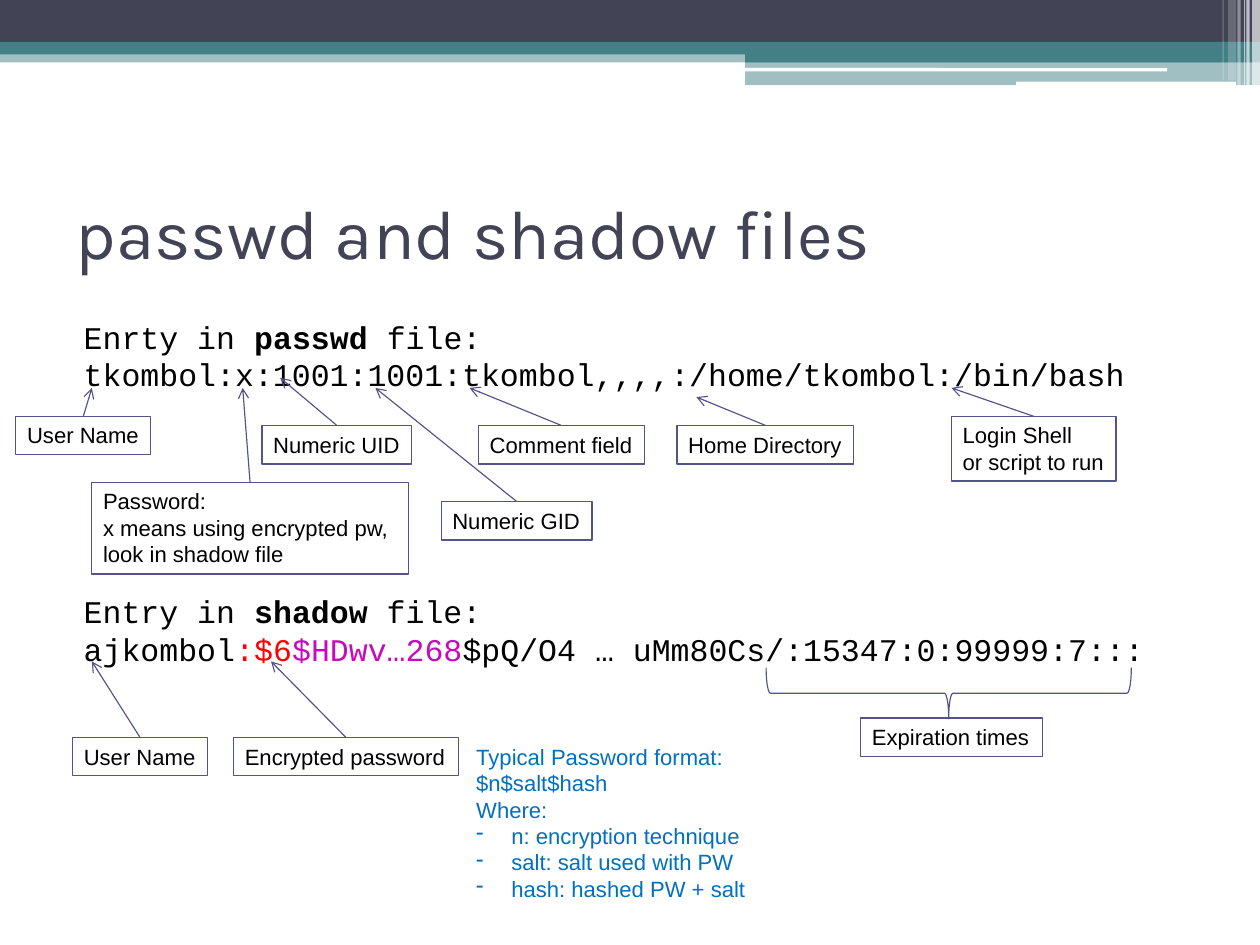
import pptx
import pptx.util
import pptx.dml.color
import pptx.enum.shapes
import pptx.enum.text
import pptx.oxml
import pptx.oxml.ns

Inches, Pt = pptx.util.Inches, pptx.util.Pt
KIND = pptx.enum.shapes.MSO_SHAPE
COLORS = {"navy": "424456", "teal": "438086", "white": "FFFFFF", "line": "53548A",
          "black": "000000", "red": "FF0000", "pink": "C60ABD", "blue": "0070C0"}

# left, top, width, height, colour, opacity in percent
BANDS = [
    (0, 0.45, 11.11, 0.1, "teal", 50),
    (0, 0, 11.11, 0.38, "navy", 100),
    (0, 0.37, 11.11, 0.11, "teal", 100),
    (6.57, 0.44, 4.54, 0.11, "teal", 100),
    (6.57, 0.53, 4.54, 0.22, "teal", 50),
]
PILLS = [(6.57, 0.6, 3.72, 0.03, "white", 100), (8.96, 0.72, 1.94, 0.04, "white", 100)]
# left, width, height, opacity
STRIPES = [(11.04, 0.07, 0.76, 65), (10.99, 0.03, 0.76, 65), (10.97, 0.01, 0.76, 60),
           (10.91, 0.03, 0.76, 40), (10.83, 0.07, 0.71, 20), (10.78, 0.01, 0.71, 30)]

TITLE = "passwd and shadow files"
# A line is a list of (text, format) runs
ENTRIES = [
    ((0.64, 2.75, 9.46, 0.77), [
        [("Enrty in ", {}), ("passwd ", {"bold": True}), ("file:", {})],
        [("tkombol:x:1001:1001:tkombol,,,,:/home/tkombol:/bin/bash", {})]]),
    ((0.64, 5.17, 9.96, 0.77), [
        [("Entry in ", {}), ("shadow", {"bold": True}), (" file:", {})],
        [("ajkombol", {}), (":$6", {"color": "red"}), ("$HDwv…268", {"color": "pink"}),
         ("$pQ/O4 … uMm80Cs/:15347:0:99999:7:::", {})]]),
]
# box, lines, arrow tip
LABELS = [
    ((0.14, 3.67, 1.19, 0.34), ["User Name"], (0.81, 3.42)),
    ((0.81, 4.25, 2.79, 0.81),
     ["Password:", "x means using encrypted pw,", "look in shadow file"], (2.14, 3.42)),
    ((2.31, 3.75, 1.32, 0.34), ["Numeric UID"], (2.47, 3.33)),
    ((3.89, 4.42, 1.33, 0.34), ["Numeric GID"], (3.31, 3.42)),
    ((4.22, 3.75, 1.46, 0.34), ["Comment field"], (4.14, 3.42)),
    ((5.97, 3.75, 1.56, 0.34), ["Home Directory"], (6.14, 3.5)),
    ((8.39, 3.67, 1.45, 0.57), ["Login Shell", "or script to run"], (8.39, 3.42)),
    ((0.64, 6.5, 1.19, 0.34), ["User Name"], (0.81, 5.83)),
    ((2.06, 6.5, 1.98, 0.34), ["Encrypted password"], (2.39, 5.83)),
    ((7.59, 6.33, 1.6, 0.34), ["Expiration times"], None),
]
BRACE = (8.14, 4.5, 0.45, 3.22)
NOTE_BOX = (4.1, 6.5, 2.59, 1.51)
NOTE = ["Typical Password format:", "$n$salt$hash", "Where:"]
TERMS = ["n: encryption technique", "salt: salt used with PW", "hash: hashed PW + salt"]


def rgb(name):
    return pptx.dml.color.RGBColor.from_string(COLORS[name])


def add_xml(parent, tag, **attrs):
    node = pptx.oxml.parse_xml(f"<a:{tag} {pptx.oxml.ns.nsdecls('a')}/>")
    for key, value in attrs.items():
        node.set(key, str(value))
    parent.append(node)
    return node


def write(frame, lines, font="Arial", size=14, color="black", bullets=0):
    """Fill the frame; the last `bullets` lines get a dash."""
    for i, line in enumerate(lines):
        para = frame.paragraphs[0] if i == 0 else frame.add_paragraph()
        para.alignment = pptx.enum.text.PP_ALIGN.LEFT
        for text, form in [(line, {})] if isinstance(line, str) else line:
            run = para.add_run()
            run.text = text
            run.font.name, run.font.size = font, Pt(size)
            run.font.bold = form.get("bold", False)
            run.font.color.rgb = rgb(form.get("color", color))
        if i >= len(lines) - bullets:
            props = para._p.get_or_add_pPr()
            props.set("marL", str(Inches(0.31)))
            props.set("indent", str(-Inches(0.31)))
            add_xml(props, "buChar", char="-")


def add_text(slide, box, lines, **form):
    shape = slide.shapes.add_textbox(*map(Inches, box))
    frame = shape.text_frame
    frame.word_wrap = False
    frame.auto_size = pptx.enum.text.MSO_AUTO_SIZE.SHAPE_TO_FIT_TEXT
    write(frame, lines, **form)
    return shape


def outline(shape):
    shape.line.color.rgb = rgb("line")
    shape.line.width = Pt(0.75)


def add_bar(slide, kind, left, top, width, height, color, alpha):
    bar = slide.shapes.add_shape(kind, *map(Inches, (left, top, width, height)))
    bar.shadow.inherit = False
    bar.line.fill.background()
    bar.fill.solid()
    bar.fill.fore_color.rgb = rgb(color)
    if alpha < 100:
        tint = bar._element.spPr.find(".//" + pptx.oxml.ns.qn("a:srgbClr"))
        add_xml(tint, "alpha", val=alpha * 1000)


def add_arrow(slide, start, tip):
    arrow = slide.shapes.add_connector(
        pptx.enum.shapes.MSO_CONNECTOR.STRAIGHT, *map(Inches, start + tip))
    outline(arrow)
    add_xml(arrow.line._get_or_add_ln(), "tailEnd", type="arrow")
    add_xml(arrow._element.spPr, "effectLst")


def main():
    deck = pptx.Presentation()
    deck.slide_width, deck.slide_height = Inches(11.11), Inches(8.33)
    slide = deck.slides.add_slide(deck.slide_layouts[5])

    for band in BANDS:
        add_bar(slide, KIND.RECTANGLE, *band)
    for pill in PILLS:
        add_bar(slide, KIND.ROUNDED_RECTANGLE, *pill)
    for left, width, height, alpha in STRIPES:
        add_bar(slide, KIND.RECTANGLE, left, 0, width, height, "white", alpha)

    title = slide.shapes.title
    title.left, title.top, title.width, title.height = map(Inches, (0.56, 1.39, 10, 1.3))
    frame = title.text_frame
    frame.vertical_anchor = pptx.enum.text.MSO_ANCHOR.MIDDLE
    frame.margin_left = frame.margin_right = Inches(0.11)
    frame.margin_top = frame.margin_bottom = Inches(0.06)
    write(frame, [TITLE], font="Karla", size=44, color="navy")

    for box, lines in ENTRIES:
        add_text(slide, box, lines, font="Courier New", size=20)
    for box, lines, tip in LABELS:
        outline(add_text(slide, box, lines))
        if tip:
            left, top, width, _ = box
            add_arrow(slide, (left + width / 2, top), tip)

    brace = slide.shapes.add_shape(KIND.LEFT_BRACE, *map(Inches, BRACE))
    brace.rotation = 270
    brace.shadow.inherit = False
    brace.fill.background()
    outline(brace)
    add_text(slide, NOTE_BOX, NOTE + TERMS, color="blue", bullets=len(TERMS))

    deck.save("out.pptx")


if __name__ == "__main__":
    main()
